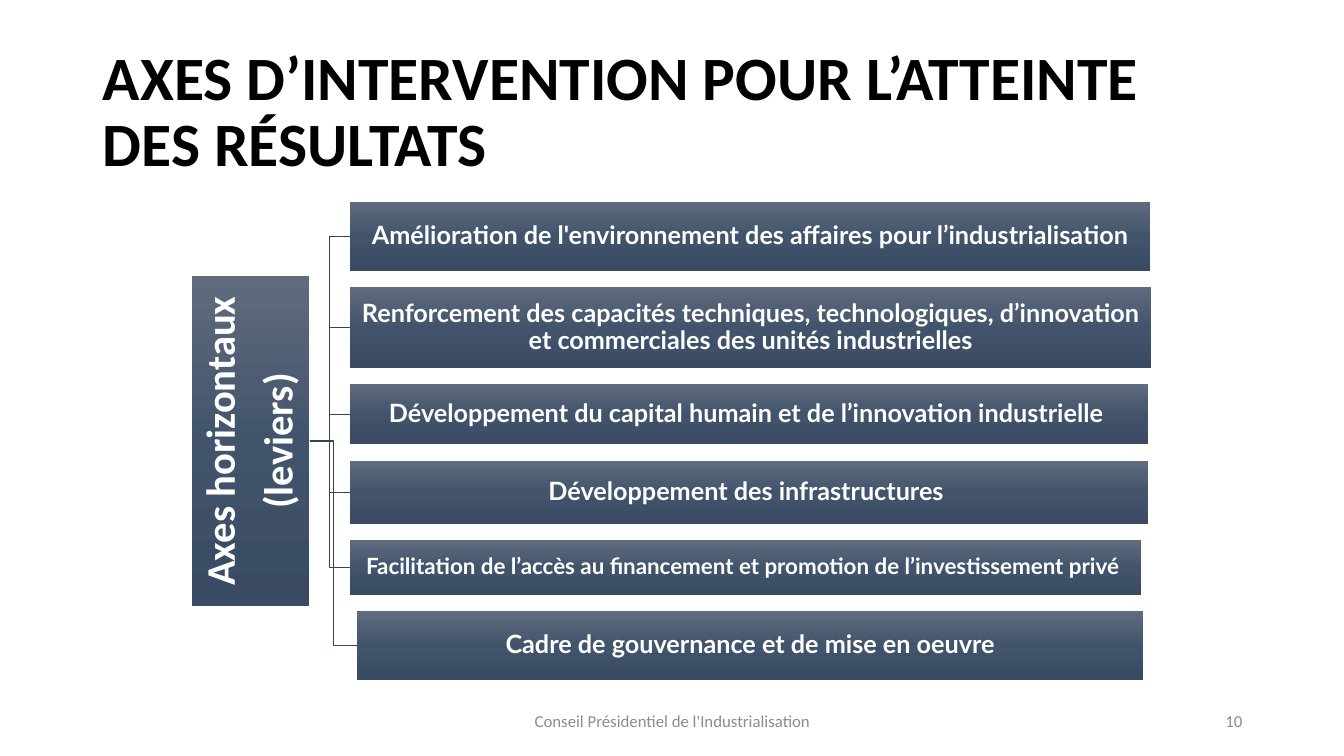
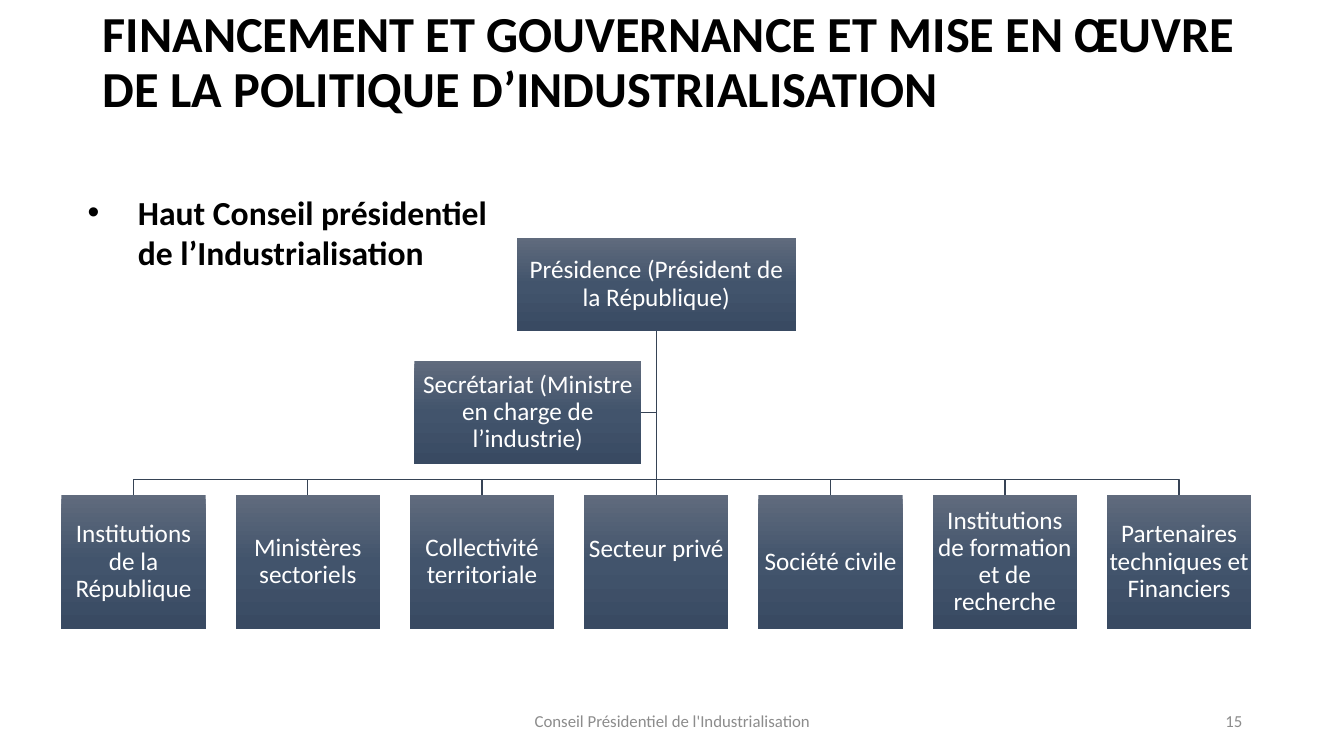
from copy import deepcopy

from lxml import etree
from pptx import Presentation
from pptx.dml.color import RGBColor
from pptx.enum import shapes, text
from pptx.oxml.ns import qn
from pptx.util import Inches, Pt

COLORS = {"ink": "000000", "white": "FFFFFF", "muted": "8C8C8C", "line": "364355",
          "top": "606B7D", "middle": "42546C", "bottom": "394A62"}
FOOTER = "Conseil Présidentiel de l'Industrialisation"
LEFT, CENTER, RIGHT = text.PP_ALIGN.LEFT, text.PP_ALIGN.CENTER, text.PP_ALIGN.RIGHT

LEVERS = [  # text, height, width, size
    ("Amélioration de l'environnement des affaires pour l’industrialisation", 0.69, 7.94, 18),
    ("Renforcement des capacités techniques, technologiques, d’innovation "
     "et commerciales des unités industrielles", 0.8, 7.95, 18),
    ("Développement du capital humain et de l’innovation industrielle ", 0.6, 7.92, 18),
    ("Développement des infrastructures ", 0.63, 7.92, 18),
    ("Facilitation de l’accès au financement et promotion de l’investissement privé ",
     0.54, 7.85, 16),
    ("Cadre de gouvernance et de mise en oeuvre", 0.69, 7.8, 18),
]
MEMBERS = ["Institutions de la République", "Ministères sectoriels",
           "Collectivité territoriale", "Secteur privé", "Société civile",
           "Institutions de formation et de recherche",
           "Partenaires techniques et Financiers"]


def rgb(name):
    return RGBColor.from_string(COLORS[name])


def write(sp, lines, size, color="ink", font="Calibri", bold=False, align=LEFT,
          spacing=None, after=0, inset=None, bottom=None,
          anchor=text.MSO_ANCHOR.MIDDLE):
    """Fill a shape with one paragraph per line and return its text frame."""
    tf = sp.text_frame
    tf.word_wrap = True
    tf.auto_size = text.MSO_AUTO_SIZE.NONE
    tf.vertical_anchor = anchor
    if inset is not None:
        tf.margin_left = tf.margin_right = Inches(inset)
        tf.margin_top = tf.margin_bottom = Inches(inset)
    if bottom is not None:
        tf.margin_bottom = Inches(bottom)
    for i, line in enumerate(lines):
        p = tf.add_paragraph() if i else tf.paragraphs[0]
        p.alignment = align
        p.space_before, p.space_after = Pt(0), Pt(after)
        p.line_spacing = spacing
        r = p.add_run()
        r.text = line
        r.font.name, r.font.size, r.font.bold = font, Pt(size), bold
        r.font.color.rgb = rgb(color)
    return tf


def add_text(slide, box, content, size, **fmt):
    sp = slide.shapes.add_textbox(*map(Inches, box))
    return write(sp, [content], size, **fmt)


def add_box(slide, box, lines, size=18, inset=0.01, **fmt):
    """Add a rectangle with the shared vertical gradient and white text."""
    sp = slide.shapes.add_shape(shapes.MSO_SHAPE.RECTANGLE, *map(Inches, box))
    sp.shadow.inherit = False
    sp.line.fill.background()
    sp.fill.gradient()
    sp.fill.gradient_angle = 270
    stops = sp._element.spPr.find(qn("a:gradFill")).find(qn("a:gsLst"))
    stops.append(deepcopy(stops[0]))
    for stop, position, name in zip(sp.fill.gradient_stops, (0, 0.5, 1),
                                    ("top", "middle", "bottom")):
        stop.position = position
        stop.color.rgb = rgb(name)
    return write(sp, lines, size, color="white", align=CENTER, spacing=0.9,
                 inset=inset, **fmt)


def style_line(sp):
    sp.line.color.rgb = rgb("line")
    sp.line.width = Pt(1)


def add_link(slide, start, end, kind=shapes.MSO_CONNECTOR.STRAIGHT):
    link = slide.shapes.add_connector(kind, *map(Inches, (*start, *end)))
    style_line(link)
    etree.SubElement(link._element.spPr, qn("a:effectLst"))


def add_bent_link(slide, *points):
    """Draw an open line through the given points."""
    start, *rest = [tuple(map(Inches, point)) for point in points]
    builder = slide.shapes.build_freeform(*start)
    builder.add_line_segments(rest, close=False)
    sp = builder.convert_to_shape()
    sp.shadow.inherit = False
    sp.fill.background()
    style_line(sp)


def add_slide(prs, title, number, box, size, bottom=0.05):
    """Add a title-only slide with its footer and page number."""
    slide = prs.slides.add_slide(prs.slide_layouts[5])
    sp = slide.shapes.title
    sp.left, sp.top, sp.width, sp.height = map(Inches, box)
    write(sp, [title], size, bold=True, spacing=0.9, bottom=bottom)
    add_text(slide, (4.42, 6.95, 4.5, 0.4), FOOTER, 12, color="muted", align=CENTER)
    add_text(slide, (9.42, 6.95, 3, 0.4), number, 12, color="muted", align=RIGHT)
    return slide


def add_lever_tree(slide, x, y):
    """Draw the root box and its stack of levers from the top left corner."""
    root_w, root_h, gap = 1.17, 3.27, 0.16
    root_y = y + 0.74
    start = (x + root_w, root_y + root_h / 2)
    top = y
    for i, (label, height, width, size) in enumerate(LEVERS):
        left = x + (1.64 if i == len(LEVERS) - 1 else 1.57)
        add_link(slide, start, (left, top + height / 2), shapes.MSO_CONNECTOR.ELBOW)
        add_box(slide, (left, top, width, height), [label], size, font="Lato", bold=True)
        top += height + gap
    tf = add_box(slide, (x, root_y, root_w, root_h), ["Axes horizontaux", "(leviers)"],
                 29, inset=0.02, bold=True, after=10)
    tf._txBody.bodyPr.set("vert", "vert270")


def add_council_chart(slide, x, y, width):
    """Draw the organisation chart from its top left corner."""
    box_w, box_h = 1.43, 1.33
    step = (width - box_w) / (len(MEMBERS) - 1)
    centers = [x + box_w / 2 + i * step for i in range(len(MEMBERS))]
    trunk = x + width / 2
    head_w, head_h = 2.77, 0.92
    aide_w, aide_h, aide_y = 2.25, 1.02, y + 1.22
    aide_right, aide_mid = trunk - 0.15, aide_y + aide_h / 2
    row_y = y + 2.55
    bus_y = row_y - 0.15
    head_foot = (trunk, y + head_h)

    add_bent_link(slide, head_foot, (trunk, aide_mid), (aide_right, aide_mid))
    for i, center in enumerate(centers):
        if i == len(centers) // 2:
            add_link(slide, head_foot, (trunk, row_y))
        else:
            add_bent_link(slide, head_foot, (trunk, bus_y), (center, bus_y),
                          (center, row_y))
    add_box(slide, (trunk - head_w / 2, y, head_w, head_h),
            ["Présidence (Président de la République)"], inset=0.02)
    for center, member in zip(centers, MEMBERS):
        add_box(slide, (center - box_w / 2, row_y, box_w, box_h), [member],
                bottom=0.26 if member == "Secteur privé" else None)
    add_box(slide, (aide_right - aide_w, aide_y, aide_w, aide_h),
            ["Secrétariat (Ministre en charge de l’industrie)"])


def add_bullet(slide, box, content):
    tf = add_text(slide, box, content, 24, bold=True, anchor=text.MSO_ANCHOR.TOP)
    pPr = tf.paragraphs[0]._p.get_or_add_pPr()
    pPr.set("marL", str(Inches(0.5)))
    pPr.set("indent", str(-Inches(0.5)))
    etree.SubElement(pPr, qn("a:buFont")).set("typeface", "Arial")
    etree.SubElement(pPr, qn("a:buChar")).set("char", "•")


def main():
    prs = Presentation()
    prs.slide_width, prs.slide_height = Inches(13.33), Inches(7.5)

    slide = add_slide(prs, "AXES D’INTERVENTION POUR L’ATTEINTE DES RÉSULTATS", "10",
                      (0.92, 0.4, 11.5, 1.45), 44)
    add_lever_tree(slide, 1.9, 2)

    slide = add_slide(prs, "FINANCEMENT ET GOUVERNANCE ET MISE EN ŒUVRE "
                      "DE LA POLITIQUE D’INDUSTRIALISATION", "15",
                      (0.92, 0.15, 11.5, 1.5), 36, bottom=0.59)
    add_council_chart(slide, 0.61, 2.36, 11.8)
    add_bullet(slide, (0.77, 1.85, 4.36, 0.91),
               "Haut Conseil présidentiel de l’Industrialisation")

    prs.save("out.pptx")


if __name__ == "__main__":
    main()
